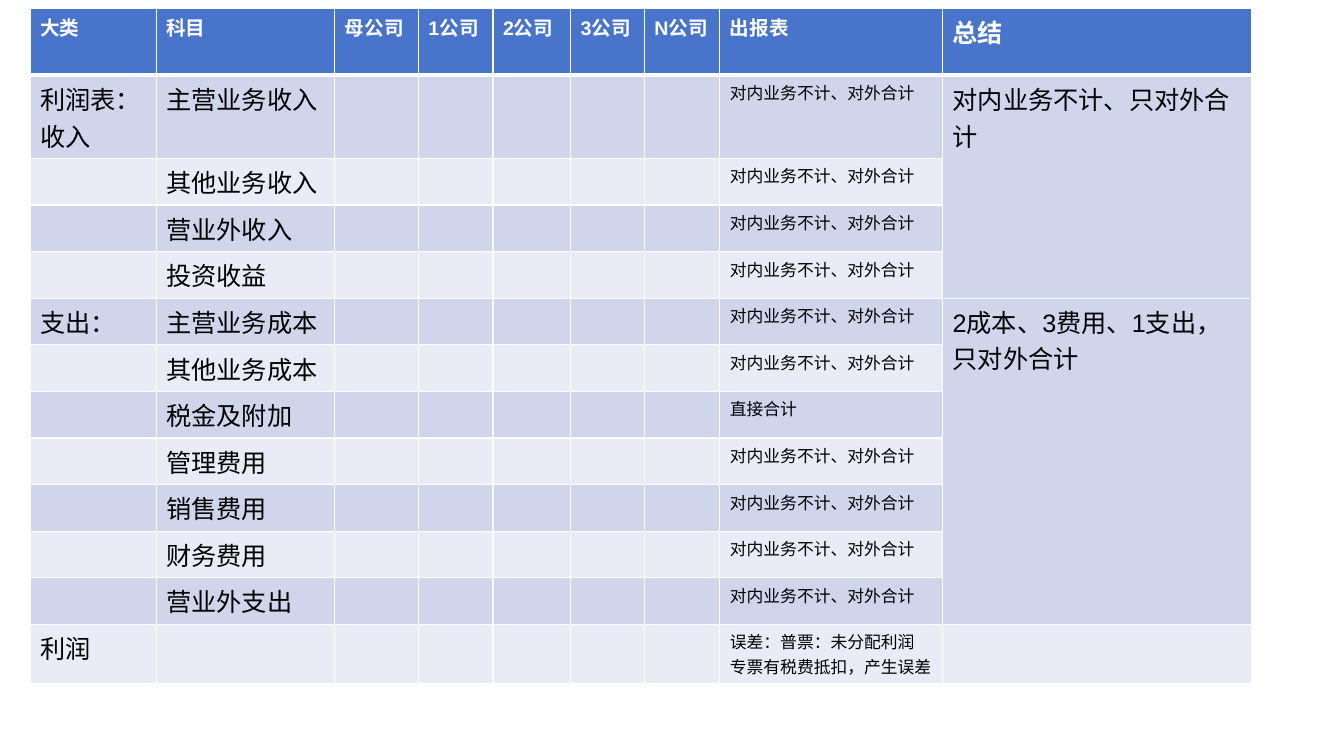
from lxml import etree
from pptx import Presentation
from pptx import util as u
from pptx.dml.color import RGBColor
from pptx.oxml import ns

WHITE = RGBColor(0xFF, 0xFF, 0xFF)
BLACK = RGBColor(0x00, 0x00, 0x00)
HEADER_BLUE = RGBColor(0x48, 0x74, 0xCB)
BAND_DARK = RGBColor(0xCF, 0xD6, 0xEC)
BAND_LIGHT = RGBColor(0xE9, 0xEB, 0xF6)

# Grid of the slide: 133.3 columns by 75 rows
GRID_COLUMNS, GRID_ROWS = 133.3, 75

COLUMN_WIDTHS = [12.5, 17.7, 8.3, 7.4, 7.7, 7.3, 7.5, 22.1, 30.6]
ROW_HEIGHTS = [5, 4, 4, 4.3] + [4] * 9
HEADERS = ["大类", "科目", "母公司", "1公司", "2公司", "3公司", "N公司", "出报表", "总结"]
CATEGORY, SUBJECT, REPORT, SUMMARY = 0, 1, 7, 8
EXTERNAL_ONLY = "对内业务不计、对外合计"

# Category, subject, report rule
ACCOUNTS = [
    ("利润表：收入", "主营业务收入", EXTERNAL_ONLY),
    ("", "其他业务收入", EXTERNAL_ONLY),
    ("", "营业外收入", EXTERNAL_ONLY),
    ("", "投资收益", EXTERNAL_ONLY),
    ("支出：", "主营业务成本", EXTERNAL_ONLY),
    ("", "其他业务成本", EXTERNAL_ONLY),
    ("", "税金及附加", "直接合计"),
    ("", "管理费用", EXTERNAL_ONLY),
    ("", "销售费用", EXTERNAL_ONLY),
    ("", "财务费用", EXTERNAL_ONLY),
    ("", "营业外支出", EXTERNAL_ONLY),
    ("利润", "", "误差：普票：未分配利润\n专票有税费抵扣，产生误差"),
]

# First row, last row, text of each merged summary
SUMMARIES = [
    (1, 4, "对内业务不计、只对外合计"),
    (5, 11, "2成本、3费用、1支出，只对外合计"),
]


class SlideBuilder:
    """Holds the style and the current slide."""

    font = "Arial"
    line_color = WHITE

    def __init__(self, presentation):
        self.presentation = presentation
        self.slide = presentation.slides.add_slide(presentation.slide_layouts[6])

    def across(self, columns):
        return u.Emu(round(self.presentation.slide_width * columns / GRID_COLUMNS))

    def down(self, rows):
        return u.Emu(round(self.presentation.slide_height * rows / GRID_ROWS))

    def table(self, left, top, widths, heights):
        frame = self.slide.shapes.add_table(
            len(heights), len(widths), self.across(left), self.down(top),
            self.across(sum(widths)), self.down(sum(heights)))
        table = frame.table
        for column, width in zip(table.columns, widths):
            column.width = self.across(width)
        for row, height in zip(table.rows, heights):
            row.height = self.down(height)
        return table

    def cell(self, cell, fill, top=1, bottom=1):
        for side, points in (("L", 1), ("R", 1), ("T", top), ("B", bottom)):
            self.border(cell, side, points)
        cell.fill.solid()
        cell.fill.fore_color.rgb = fill

    def border(self, cell, side, points):
        properties = cell._tc.get_or_add_tcPr()
        line = etree.SubElement(properties, ns.qn(f"a:ln{side}"), w=str(u.Pt(points)))
        solid = etree.SubElement(line, ns.qn("a:solidFill"))
        etree.SubElement(solid, ns.qn("a:srgbClr"), val=str(self.line_color))

    def cell_text(self, cell, content, size, color=BLACK, bold=False):
        frame = cell.text_frame
        for index, line in enumerate(content.split("\n")):
            paragraph = frame.add_paragraph() if index else frame.paragraphs[0]
            run = paragraph.add_run()
            run.text = line
            run.font.name = self.font
            run.font.size = u.Pt(size)
            run.font.bold = bold
            run.font.color.rgb = color


def main():
    presentation = Presentation()
    presentation.slide_width = u.Inches(13.33)
    presentation.slide_height = u.Inches(7.5)
    builder = SlideBuilder(presentation)
    table = builder.table(3, 0.8, COLUMN_WIDTHS, ROW_HEIGHTS)

    # Header row
    for column, header in enumerate(HEADERS):
        cell = table.cell(0, column)
        builder.cell(cell, HEADER_BLUE, bottom=3)
        builder.cell_text(cell, header, 18 if column == SUMMARY else 14, WHITE, True)

    # Banded account rows
    for row, (category, subject, report) in enumerate(ACCOUNTS, start=1):
        fill = BAND_DARK if row % 2 else BAND_LIGHT
        for column in range(len(HEADERS)):
            builder.cell(table.cell(row, column), fill, top=3 if row == 1 else 1)
        for column, content, size in (
                (CATEGORY, category, 18), (SUBJECT, subject, 18), (REPORT, report, 12)):
            if content:
                builder.cell_text(table.cell(row, column), content, size)

    # Merged summaries
    for first, last, content in SUMMARIES:
        cell = table.cell(first, SUMMARY)
        cell.merge(table.cell(last, SUMMARY))
        builder.cell_text(cell, content, 18)

    presentation.save("out.pptx")


if __name__ == "__main__":
    main()
